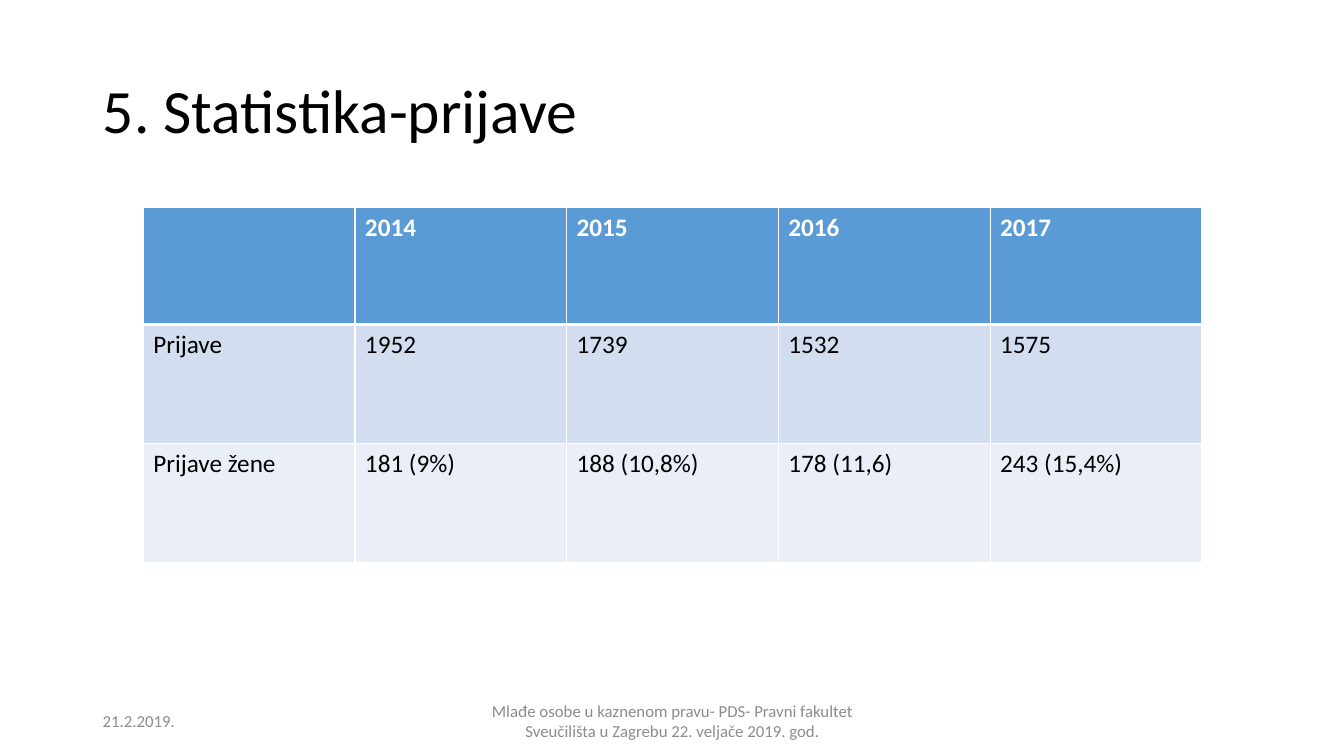
from dataclasses import dataclass

from lxml.etree import SubElement
from pptx import Presentation
from pptx.dml.color import RGBColor as RGB
from pptx.enum.text import MSO_ANCHOR as Anchor, MSO_AUTO_SIZE as Fit, PP_ALIGN as Align
from pptx.oxml.ns import qn
from pptx.slide import Slide
from pptx.table import _Cell as Cell
from pptx.text.text import TextFrame as Frame
from pptx.util import Inches, Pt

FONT = "Calibri"
BLACK = RGB(0x00, 0x00, 0x00)
WHITE = RGB(0xFF, 0xFF, 0xFF)
GRAY = RGB(0x8C, 0x8C, 0x8C)
BLUE = RGB(0x5B, 0x9B, 0xD5)
PALE = RGB(0xD2, 0xDE, 0xEF)
LIGHT = RGB(0xEA, 0xEF, 0xF7)

COL_WIDTH = 2.1
THIN, THICK = 1, 3


@dataclass
class Row:
    height: float
    fill: RGB
    color: RGB
    bold: bool
    top: int
    bottom: int
    texts: list[str]


@dataclass
class Note:
    left: float
    width: float
    align: Align
    text: str


ROWS = [
    Row(1.16, BLUE, WHITE, True, THIN, THICK,
        ["", "2014", "2015", "2016", "2017"]),
    Row(1.18, PALE, BLACK, False, THICK, THIN,
        ["Prijave", "1952", "1739", "1532", "1575"]),
    Row(1.18, LIGHT, BLACK, False, THIN, THIN,
        ["Prijave žene", "181 (9%)", "188 (10,8%)", "178 (11,6)", "243 (15,4%)"]),
]

NOTES = [
    Note(0.92, 3, Align.LEFT, "21.2.2019."),
    Note(4.42, 4.5, Align.CENTER,
         "Mlađe osobe u kaznenom pravu- PDS- Pravni fakultet "
         "Sveučilišta u Zagrebu 22. veljače 2019. god."),
]


def write(frame: Frame, text: str, size: int, color: RGB,
          bold: bool = False, align: Align = Align.LEFT) -> None:
    frame.text = text
    para = frame.paragraphs[0]
    para.alignment = align
    for font in [para.font] + [run.font for run in para.runs]:
        font.name = FONT
        font.size = Pt(size)
        font.bold = bold
        font.color.rgb = color


def add_title(slide: Slide) -> None:
    title = slide.shapes.title
    title.left, title.top = Inches(0.92), Inches(0.4)
    title.width, title.height = Inches(11.5), Inches(1.45)
    frame = title.text_frame
    write(frame, "5. Statistika-prijave", 44, BLACK)
    frame.auto_size = Fit.NONE
    frame.vertical_anchor = Anchor.MIDDLE
    frame.paragraphs[0].line_spacing = 0.9


def set_edges(cell: Cell, top: int, bottom: int) -> None:
    """Draw white borders; call before the cell gets its fill."""
    props = cell._tc.get_or_add_tcPr()
    edges = {"a:lnL": THIN, "a:lnR": THIN, "a:lnT": top, "a:lnB": bottom}
    for tag, width in edges.items():
        line = SubElement(props, qn(tag), w=str(Pt(width)))
        fill = SubElement(line, qn("a:solidFill"))
        SubElement(fill, qn("a:srgbClr"), val=str(WHITE))


def add_grid(slide: Slide) -> None:
    count = len(ROWS[0].texts)
    table = slide.shapes.add_table(
        len(ROWS), count, Inches(1.42), Inches(2.06),
        Inches(COL_WIDTH * count), Inches(sum(row.height for row in ROWS))).table
    for col in table.columns:
        col.width = Inches(COL_WIDTH)
    for i, row in enumerate(ROWS):
        table.rows[i].height = Inches(row.height)
        for cell, text in zip(table.rows[i].cells, row.texts):
            set_edges(cell, row.top, row.bottom)
            cell.fill.solid()
            cell.fill.fore_color.rgb = row.fill
            write(cell.text_frame, text, 18, row.color, row.bold)


def add_note(slide: Slide, note: Note) -> None:
    box = slide.shapes.add_textbox(
        Inches(note.left), Inches(6.95), Inches(note.width), Inches(0.4))
    frame = box.text_frame
    frame.word_wrap = True
    frame.vertical_anchor = Anchor.MIDDLE
    write(frame, note.text, 12, GRAY, align=note.align)


def main() -> None:
    deck = Presentation()
    deck.slide_width, deck.slide_height = Inches(13.33), Inches(7.5)
    slide = deck.slides.add_slide(deck.slide_layouts.get_by_name("Title Only"))
    add_title(slide)
    add_grid(slide)
    for note in NOTES:
        add_note(slide, note)
    deck.save("out.pptx")


if __name__ == "__main__":
    main()
